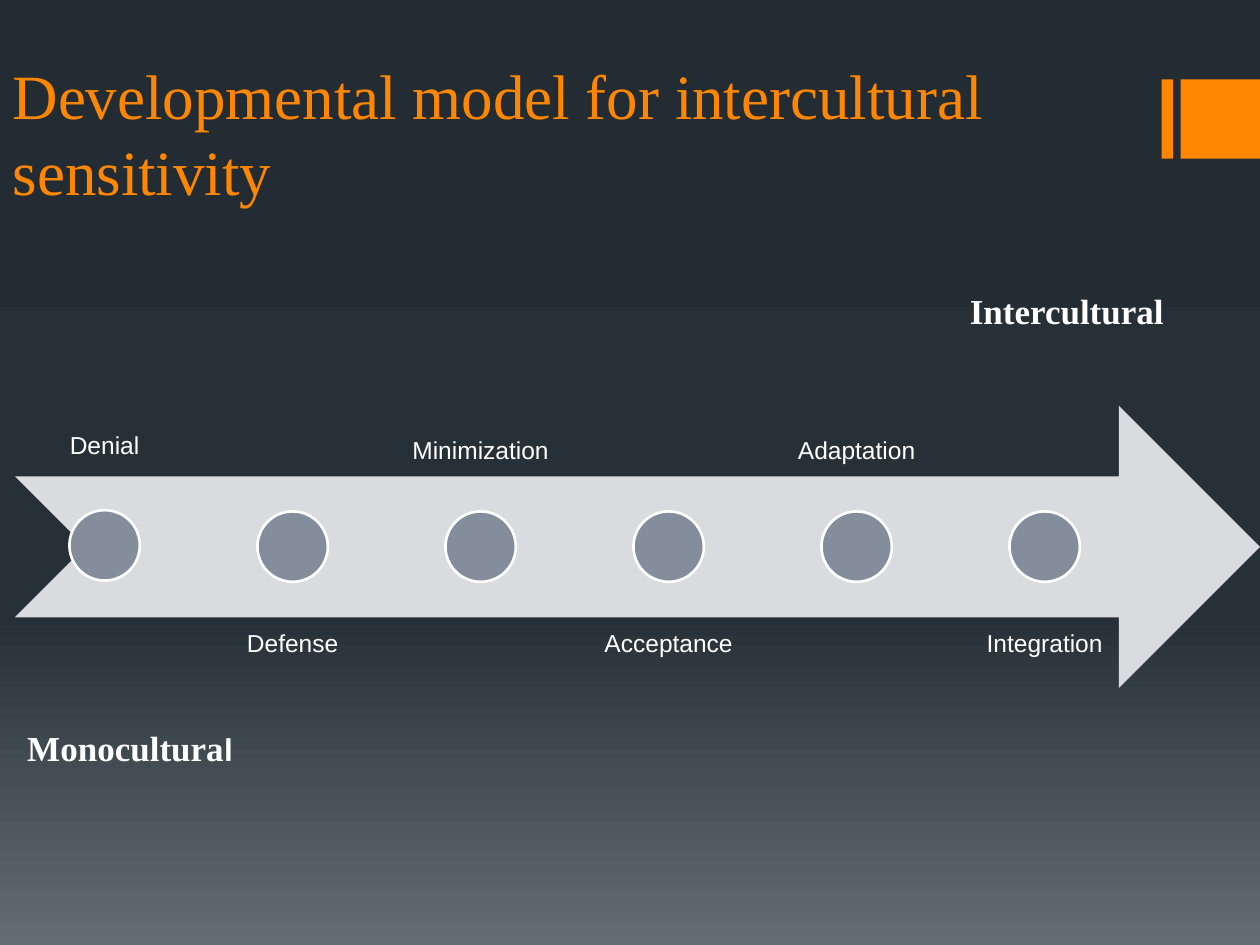
from lxml.etree import SubElement
from pptx import Presentation
from pptx.dml.color import RGBColor
from pptx.enum.shapes import MSO_SHAPE
from pptx.enum.text import MSO_ANCHOR, MSO_AUTO_SIZE, PP_ALIGN
from pptx.oxml.ns import qn
from pptx.util import Cm, Pt

TITLE = "Developmental model for intercultural sensitivity"
STAGES = ["Denial", "Defense", "Minimization", "Acceptance", "Adaptation", "Integration"]
SKY = [(0, "242C33"), (65, "273037"), (100, "636D76")]
BARS = [(23.42, 0.23), (23.8, 1.6)]
SERIF, SANS = "Times New Roman", "Arial"
ORANGE, WHITE, PALE, SLATE = "FF8600", "FFFFFF", "D9DBDE", "838D9B"
START, STEP, DOT = 2.11, 3.79, 1.42


def rgb(code):
    return RGBColor.from_string(code)


def write(par, text, size=14, font=SANS, color=WHITE, bold=False):
    run = par.add_run()
    run.text = text
    run.font.size = Pt(size)
    run.font.name = font
    run.font.bold = bold
    run.font.color.rgb = rgb(color)


def draw(shapes, kind, box, fill, line=None):
    shape = shapes.add_shape(kind, *map(Cm, box))
    shape.shadow.inherit = False
    shape.fill.solid()
    shape.fill.fore_color.rgb = rgb(fill)
    if line:
        shape.line.color.rgb = rgb(line)
        shape.line.width = Pt(1.5)
    else:
        shape.line.fill.background()


def frame(shapes, box):
    text = shapes.add_textbox(*map(Cm, box)).text_frame
    text.word_wrap = True
    return text


def label(shapes, name, box, anchor):
    text = frame(shapes, box)
    text.vertical_anchor = anchor
    text.margin_left = text.margin_right = Cm(0.28)
    text.margin_top = text.margin_bottom = Cm(0.28)
    par = text.paragraphs[0]
    par.alignment = PP_ALIGN.CENTER
    par.line_spacing = 0.9
    par.space_after = Pt(5)
    write(par, name)


def paint(slide):
    fill = slide.background.fill
    fill.gradient()
    fill.gradient_angle = 270
    stops = next(slide.element.iter(qn("a:gsLst")))
    for stop in list(stops):
        stops.remove(stop)
    for pos, code in SKY:
        stop = SubElement(stops, qn("a:gs"), pos=str(pos * 1000))
        SubElement(stop, qn("a:srgbClr"), val=code)


def head(slide):
    title = slide.shapes.title
    title.left, title.top, title.width, title.height = map(Cm, (0, 1.52, 25.1, 2.8))
    text = title.text_frame
    text.auto_size = MSO_AUTO_SIZE.NONE
    text.vertical_anchor = MSO_ANCHOR.BOTTOM
    par = text.paragraphs[0]
    par.alignment = PP_ALIGN.LEFT
    write(par, TITLE, size=36, font=SERIF, color=ORANGE)


def chain(slide):
    shapes = slide.shapes.add_group_shape().shapes
    draw(shapes, MSO_SHAPE.NOTCHED_RIGHT_ARROW, (0.3, 8.18, 25.1, 5.69), PALE)
    for num, name in enumerate(STAGES):
        mid = START + num * STEP
        wide = 3.61 if num else 2.03
        lift = 0 if num else 0.1
        if num % 2:
            top, anchor = 12.45, MSO_ANCHOR.TOP
        else:
            top, anchor = 3.94 - lift, MSO_ANCHOR.BOTTOM
        label(shapes, name, (mid - wide / 2, top, wide, 5.69), anchor)
        draw(shapes, MSO_SHAPE.OVAL, (mid - DOT / 2, 10.31 - lift / 4, DOT, DOT), SLATE, WHITE)


def ends(slide):
    low = frame(slide.shapes, (0.3, 14.53, 7.01, 1.12)).paragraphs[0]
    write(low, "Monocultura", size=20, font=SERIF, bold=True)
    write(low, "l", size=18, bold=True)
    high = frame(slide.shapes, (19.3, 5.72, 5, 1.12)).paragraphs[0]
    write(high, "Intercultural", size=20, font=SERIF, bold=True)


def main():
    deck = Presentation()
    deck.slide_width, deck.slide_height = Cm(25.4), Cm(19.05)
    slide = deck.slides.add_slide(deck.slide_layouts[5])
    paint(slide)
    for left, wide in BARS:
        draw(slide.shapes, MSO_SHAPE.RECTANGLE, (left, 1.6, wide, 1.6), ORANGE)
    head(slide)
    chain(slide)
    ends(slide)
    deck.save("out.pptx")


if __name__ == "__main__":
    main()
